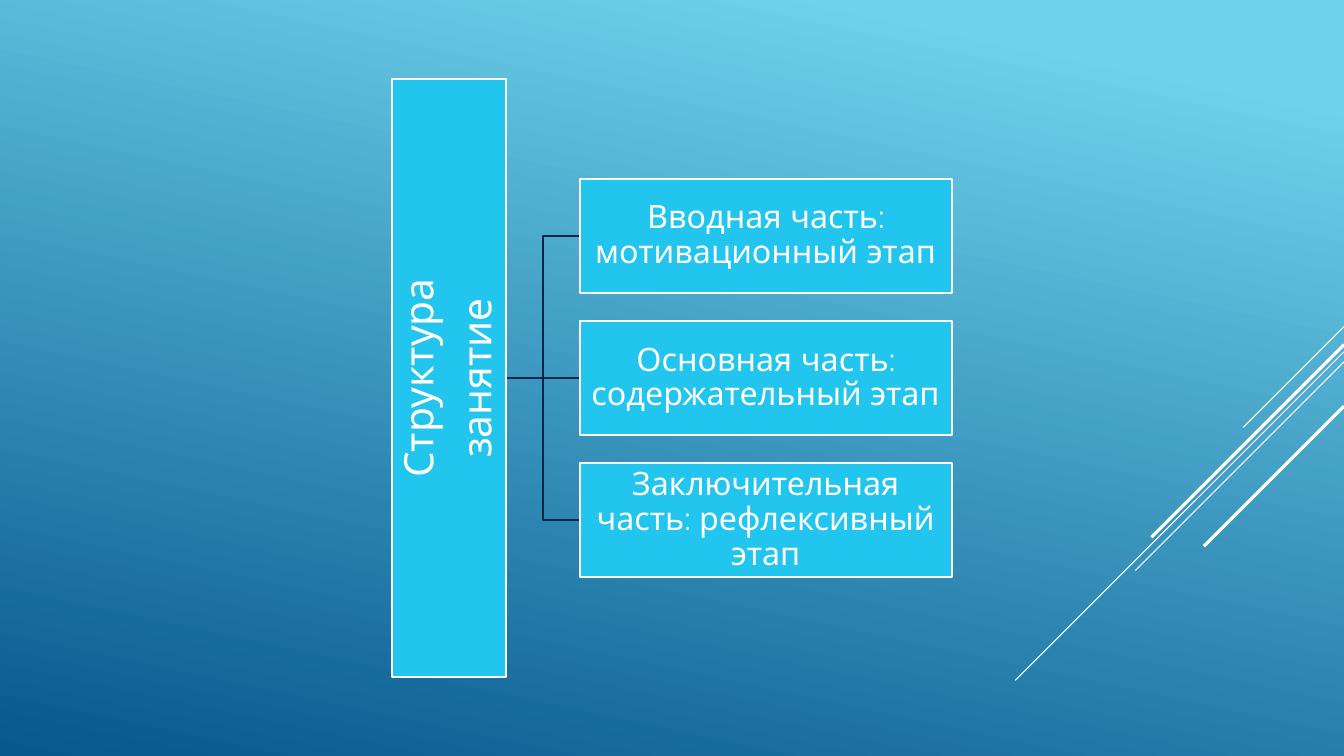
from lxml import etree
from pptx import Presentation
from pptx import util as u
from pptx.dml.color import RGBColor
from pptx.enum import shapes, text
from pptx.oxml.ns import qn

FONT = "Quicksand"
WHITE, CYAN, NAVY = "FFFFFF", "22C5ED", "04264E"
SKY, DEEP = "6ED2EB", "06588E"

# Grid of the diagram, in inches
WIDTH, HEIGHT = 13.33, 7.5
MIDDLE = HEIGHT / 2
BOX_H = 1.13
ROW_STEP = 1.41
ROOT_X, ROOT_LEN = 3.89, 5.93
STAGE_X, STAGE_W = 5.75, 3.69
ROOT_EDGE = ROOT_X + BOX_H
FORK_X = (ROOT_EDGE + STAGE_X) / 2

STAGES = [
    "Вводная часть: мотивационный этап",
    "Основная часть: содержательный этап",
    "Заключительная часть: рефлексивный этап",
]
# Diagonals from the right edge: start height, run to the left, line width
DIAGONALS = [
    (3.24, 1, 0.75),
    (3.49, 3.26, 0.75),
    (3.59, 2.07, 0.75),
    (3.42, 1.91, 2.25),
    (4.03, 1.39, 2.25),
]


def rgb(value):
    return RGBColor.from_string(value)


def set_line(s, color, width):
    s.line.color.rgb = rgb(color)
    s.line.width = u.Pt(width)


def paint_background(s):
    fill = s.background.fill
    fill.gradient()
    fill.gradient_angle = 258
    for stop, color, position in zip(fill.gradient_stops, (SKY, DEEP), (0.1, 1)):
        stop.color.rgb = rgb(color)
        stop.position = position


def add_line(s, x1, y1, x2, y2, color, width):
    line = s.shapes.add_connector(
        shapes.MSO_CONNECTOR.STRAIGHT, *(u.Inches(v) for v in (x1, y1, x2, y2)))
    set_line(line, color, width)
    etree.SubElement(line._element.spPr, qn("a:effectLst"))


def add_branch(s, y):
    """Elbow from the root box to a stage centred at height y."""
    builder = s.shapes.build_freeform(
        u.Inches(ROOT_EDGE), u.Inches(MIDDLE))
    corners = [(FORK_X, MIDDLE), (FORK_X, y), (STAGE_X, y)]
    builder.add_line_segments(
        [(u.Inches(px), u.Inches(py)) for px, py in corners], close=False)
    sp = builder.convert_to_shape()
    sp.fill.background()
    set_line(sp, NAVY, 1.25)
    sp.shadow.inherit = False


def space_after_percent(p, percent):
    space = etree.SubElement(p._p.get_or_add_pPr(), qn("a:spcAft"))
    etree.SubElement(space, qn("a:spcPct")).set("val", str(percent * 1000))


def add_box(s, x, y, w, h, lines, size, rotation=0):
    sp = s.shapes.add_shape(
        shapes.MSO_SHAPE.RECTANGLE, *(u.Inches(v) for v in (x, y, w, h)))
    sp.rotation = rotation
    sp.shadow.inherit = False
    sp.fill.solid()
    sp.fill.fore_color.rgb = rgb(CYAN)
    set_line(sp, WHITE, 1.25)
    tf = sp.text_frame
    tf.word_wrap = True
    tf.vertical_anchor = text.MSO_ANCHOR.MIDDLE
    tf.margin_left = tf.margin_right = u.Inches(0.02)
    tf.margin_top = tf.margin_bottom = u.Inches(0.02)
    for i, line in enumerate(lines):
        p = tf.add_paragraph() if i else tf.paragraphs[0]
        p.alignment = text.PP_ALIGN.CENTER
        p.line_spacing = 0.9
        space_after_percent(p, 35)
        r = p.add_run()
        r.text = line
        r.font.name = FONT
        r.font.size = u.Pt(size)
        r.font.color.rgb = rgb(WHITE)


def main():
    prs = Presentation()
    prs.slide_width, prs.slide_height = u.Inches(WIDTH), u.Inches(HEIGHT)
    s = prs.slides.add_slide(prs.slide_layouts[6])
    paint_background(s)

    # Decorative diagonals at 45 degrees
    for y, run, width in DIAGONALS:
        add_line(s, WIDTH, y, WIDTH - run, y + run, WHITE, width)

    # Branches, the middle one straight
    add_branch(s, MIDDLE + ROW_STEP)
    add_line(s, ROOT_EDGE, MIDDLE, STAGE_X, MIDDLE, NAVY, 1.25)
    add_branch(s, MIDDLE - ROW_STEP)

    # Root box, turned to read upwards
    top = MIDDLE - BOX_H / 2
    add_box(s, ROOT_X + (BOX_H - ROOT_LEN) / 2, top, ROOT_LEN, BOX_H,
            ["Структура", "занятие"], 29, rotation=270)

    # Stages
    for row, stage in enumerate(STAGES, start=-1):
        add_box(s, STAGE_X, top + row * ROW_STEP, STAGE_W, BOX_H, [stage], 23)

    prs.save("out.pptx")


if __name__ == "__main__":
    main()
